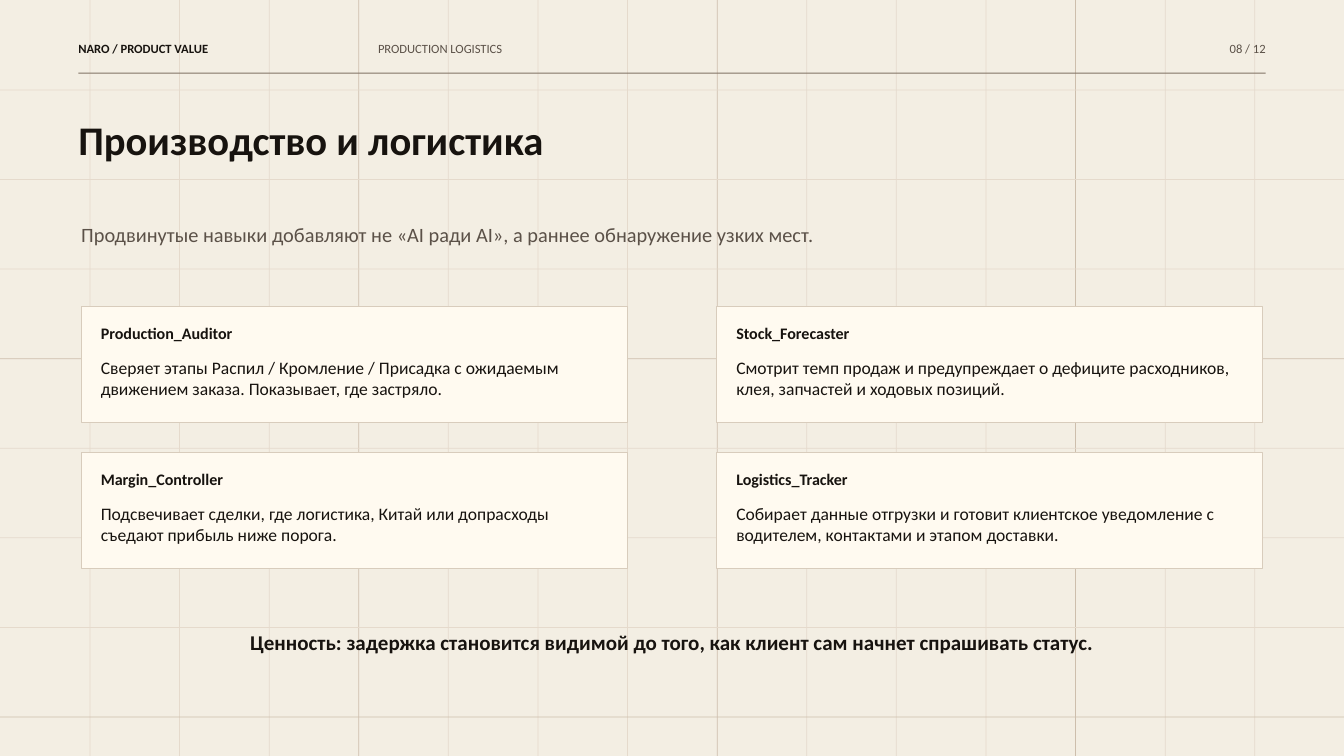
from pptx import Presentation
from pptx.dml.color import RGBColor
from pptx.enum.shapes import MSO_SHAPE
from pptx.enum.text import MSO_ANCHOR, MSO_AUTO_SIZE, PP_ALIGN
from pptx.util import Cm, Pt

COLORS = {
    "paper": "F3EEE3",
    "grid": "E5DACC",
    "grid_strong": "CDBEAC",
    "rule": "817365",
    "card": "FFFAF0",
    "card_line": "D8CCBC",
    "ink": "17130F",
    "muted": "5B5148",
}
FONT = "Calibri"
WIDTH, HEIGHT = 50.8, 28.58
GRID_STEP = WIDTH / 15
HAIRLINE = 0.03

CARDS = [
    ("Production_Auditor",
     "Сверяет этапы Распил / Кромление / Присадка с ожидаемым движением заказа. "
     "Показывает, где застряло."),
    ("Stock_Forecaster",
     "Смотрит темп продаж и предупреждает о дефиците расходников, клея, "
     "запчастей и ходовых позиций."),
    ("Margin_Controller",
     "Подсвечивает сделки, где логистика, Китай или допрасходы съедают прибыль "
     "ниже порога."),
    ("Logistics_Tracker",
     "Собирает данные отгрузки и готовит клиентское уведомление с водителем, "
     "контактами и этапом доставки."),
]


def rgb(name):
    return RGBColor.from_string(COLORS[name])


class SlideBuilder:
    def __init__(self, deck):
        self.page = deck.slides.add_slide(deck.slide_layouts[5])
        background = self.page.background.fill
        background.solid()
        background.fore_color.rgb = rgb("paper")

    def rect(self, left, top, width, height, fill, line=None):
        shape = self.page.shapes.add_shape(
            MSO_SHAPE.RECTANGLE, Cm(left), Cm(top), Cm(width), Cm(height))
        shape.shadow.inherit = False
        shape.fill.solid()
        shape.fill.fore_color.rgb = rgb(fill)
        if line:
            shape.line.color.rgb = rgb(line)
            shape.line.width = Pt(0.83)
        else:
            shape.line.fill.background()

    def grid(self):
        for column in range(1, 15):
            color = "grid" if column % 4 else "grid_strong"
            self.rect(column * GRID_STEP, 0, HAIRLINE, HEIGHT, color)
        for row in range(1, 9):
            color = "grid" if row % 4 else "grid_strong"
            self.rect(0, row * GRID_STEP, WIDTH, HAIRLINE, color)

    def fill_text(self, box, text, size, color, bold, align):
        frame = box.text_frame
        frame.word_wrap = True
        frame.auto_size = MSO_AUTO_SIZE.NONE
        frame.vertical_anchor = MSO_ANCHOR.TOP
        frame.margin_left = frame.margin_right = 0
        frame.margin_top = frame.margin_bottom = 0
        para = frame.paragraphs[0]
        para.alignment = align
        span = para.add_run()
        span.text = text
        span.font.name = FONT
        span.font.size = Pt(size)
        span.font.bold = bold
        span.font.color.rgb = rgb(color)

    def text(self, left, top, width, height, text, size, color="ink",
             bold=False, align=PP_ALIGN.LEFT):
        box = self.page.shapes.add_textbox(
            Cm(left), Cm(top), Cm(width), Cm(height))
        self.fill_text(box, text, size, color, bold, align)

    def title(self, left, top, width, height, text, size):
        box = self.page.shapes.title
        box.left, box.top = Cm(left), Cm(top)
        box.width, box.height = Cm(width), Cm(height)
        self.fill_text(box, text, size, "ink", True, PP_ALIGN.LEFT)
        # Bring the title in front of the grid
        box.element.getparent().append(box.element)

    def card(self, left, top, heading, body):
        self.rect(left, top, 20.64, 4.39, "card", "card_line")
        self.text(left + 0.74, top + 0.64, 19.16, 0.9, heading, 17.2, bold=True)
        self.text(left + 0.74, top + 1.9, 19.16, 2, body, 18.8)


def main():
    deck = Presentation()
    deck.slide_width, deck.slide_height = Cm(WIDTH), Cm(HEIGHT)
    slide = SlideBuilder(deck)

    # Background grid
    slide.grid()

    # Running header
    slide.text(2.96, 1.53, 11.11, 0.74, "NARO / PRODUCT VALUE", 13.5, bold=True)
    slide.text(14.29, 1.53, 22.23, 0.74, "PRODUCTION LOGISTICS", 13.5, "muted")
    slide.text(43.39, 1.53, 4.45, 0.74, "08 / 12", 13.5, "muted",
               align=PP_ALIGN.RIGHT)
    slide.rect(2.96, 2.75, 44.88, 0.04, "rule")

    # Title and lead
    slide.title(2.96, 4.34, 27.52, 3.65, "Производство и логистика", 43.5)
    slide.text(3.07, 8.41, 32, 2.06,
               "Продвинутые навыки добавляют не «AI ради AI», "
               "а раннее обнаружение узких мест.", 21.8, "muted")

    # Two by two cards
    for index, (heading, body) in enumerate(CARDS):
        row, column = divmod(index, 2)
        slide.card(3.07 + column * 24.02, 11.59 + row * 5.51, heading, body)

    # Takeaway
    slide.text(6.35, 23.81, 38.1, 0.97,
               "Ценность: задержка становится видимой до того, "
               "как клиент сам начнет спрашивать статус.",
               22.5, bold=True, align=PP_ALIGN.CENTER)

    deck.save("out.pptx")


if __name__ == "__main__":
    main()
